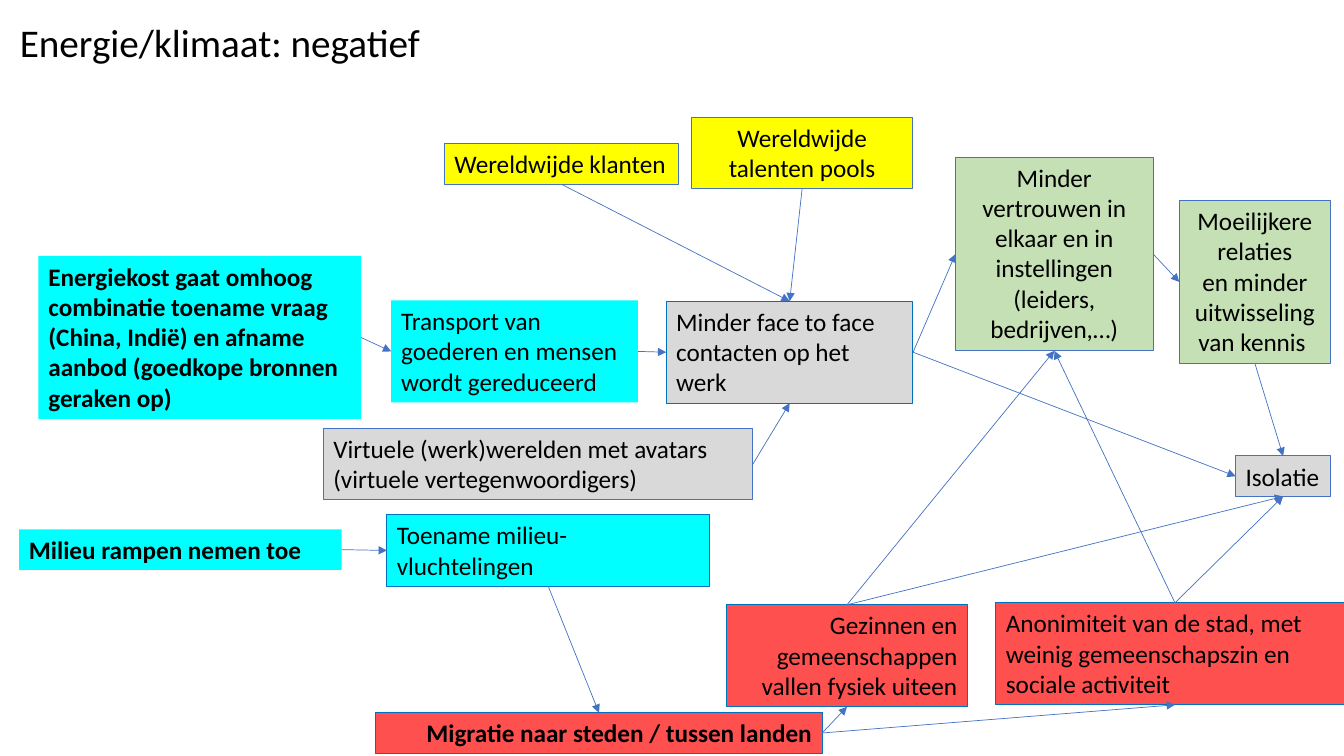
"""Build the slide with the negative energy and climate effects as a cause map."""
from dataclasses import dataclass
from enum import IntEnum
from typing import Optional

from lxml.etree import SubElement
from pptx import Presentation
from pptx.dml.color import RGBColor
from pptx.enum.shapes import MSO_CONNECTOR, MSO_SHAPE
from pptx.enum.text import MSO_ANCHOR, MSO_AUTO_SIZE, PP_ALIGN
from pptx.oxml.ns import qn
from pptx.util import Cm, Pt

FONT = "Calibri"
COLORS = {
    "black": "000000",
    "cyan": "00FFFF",
    "yellow": "FFFF00",
    "grey": "D9D9D9",
    "green": "C5E0B4",
    "red": "FF5050",
    "blue": "4472C4",
    "deep blue": "0070C0",
}


class Side(IntEnum):
    """Connection sites of a rectangle."""

    TOP = 0
    LEFT = 1
    BOTTOM = 2
    RIGHT = 3


@dataclass(frozen=True)
class Box:
    """A factor on the map, with lengths in centimetres."""

    name: str
    text: str
    left: float
    top: float
    width: float
    height: float
    fill: str
    outline: Optional[str] = None
    align: PP_ALIGN = PP_ALIGN.LEFT
    bold: bool = False
    wrap: bool = True


@dataclass(frozen=True)
class Arrow:
    """An influence of one factor on another."""

    source: str
    source_side: Side
    target: str
    target_side: Side


BOXES = [
    Box("energy", "Energiekost gaat omhoog combinatie toename vraag (China, Indië) en afname "
        "aanbod (goedkope bronnen geraken op)", 0.97, 6.45, 8.13, 4.11, "cyan", bold=True),
    Box("talent", "Wereldwijde talenten pools", 17.42, 2.95, 5.59, 1.8,
        "yellow", "blue", PP_ALIGN.CENTER),
    Box("customers", "Wereldwijde klanten", 11.2, 3.62, 5.89, 1.02,
        "yellow", "blue", wrap=False),
    Box("disasters", "Milieu rampen nemen toe", 0.48, 13.34, 8.13, 1.02, "cyan", bold=True),
    Box("virtual", "Virtuele (werk)werelden met avatars (virtuele vertegenwoordigers)",
        8.15, 10.8, 10.82, 1.8, "grey", "blue"),
    Box("transport", "Transport van goederen en mensen wordt gereduceerd",
        9.86, 7.57, 6.22, 2.57, "cyan"),
    Box("contacts", "Minder face to face contacten op het werk",
        16.79, 7.59, 6.22, 2.57, "grey", "deep blue"),
    Box("isolation", "Isolatie", 31.14, 11.49, 2.39, 1.02, "grey", "blue", wrap=False),
    Box("trust", "Minder vertrouwen in elkaar en in instellingen (leiders, bedrijven,…)",
        24.08, 3.96, 4.98, 4.88, "green", "blue", PP_ALIGN.CENTER),
    Box("relations", "Moeilijkere relaties\nen minder uitwisseling van kennis ",
        29.72, 5.05, 3.81, 4.11, "green", "blue", PP_ALIGN.CENTER),
    Box("refugees", "Toename milieu-vluchtelingen", 9.75, 12.97, 8.13, 1.8,
        "cyan", "deep blue"),
    Box("families", "Gezinnen en gemeenschappen vallen fysiek uiteen",
        18.31, 15.24, 6.07, 2.57, "red", "deep blue", PP_ALIGN.RIGHT),
    Box("anonymity", "Anonimiteit van de stad, met weinig gemeenschapszin en sociale activiteit",
        25.1, 15.19, 9.02, 2.57, "red", "deep blue"),
    Box("migration", "Migratie naar steden / tussen landen", 9.47, 17.96, 11.25, 1.02,
        "red", "deep blue", PP_ALIGN.RIGHT, bold=True),
]

ARROWS = [
    Arrow("customers", Side.BOTTOM, "contacts", Side.TOP),
    Arrow("talent", Side.BOTTOM, "contacts", Side.TOP),
    Arrow("virtual", Side.RIGHT, "contacts", Side.BOTTOM),
    Arrow("energy", Side.RIGHT, "transport", Side.LEFT),
    Arrow("transport", Side.RIGHT, "contacts", Side.LEFT),
    Arrow("contacts", Side.RIGHT, "isolation", Side.LEFT),
    Arrow("trust", Side.RIGHT, "relations", Side.LEFT),
    Arrow("relations", Side.BOTTOM, "isolation", Side.TOP),
    Arrow("contacts", Side.RIGHT, "trust", Side.LEFT),
    Arrow("families", Side.TOP, "trust", Side.BOTTOM),
    Arrow("anonymity", Side.TOP, "trust", Side.BOTTOM),
    Arrow("disasters", Side.RIGHT, "refugees", Side.LEFT),
    Arrow("families", Side.TOP, "isolation", Side.BOTTOM),
    Arrow("anonymity", Side.TOP, "isolation", Side.BOTTOM),
    Arrow("migration", Side.RIGHT, "anonymity", Side.BOTTOM),
    Arrow("migration", Side.RIGHT, "families", Side.BOTTOM),
    Arrow("refugees", Side.BOTTOM, "migration", Side.TOP),
]


def color(name: str) -> RGBColor:
    """Look up a named colour."""
    return RGBColor.from_string(COLORS[name])


def format_text(text_frame, size: float, align: PP_ALIGN, bold: bool = False) -> None:
    """Give all runs the slide's font and all paragraphs one alignment."""
    for paragraph in text_frame.paragraphs:
        paragraph.alignment = align
        for run in paragraph.runs:
            run.font.name = FONT
            run.font.size = Pt(size)
            run.font.bold = bold
            run.font.color.rgb = color("black")


def add_title(slide, text: str) -> None:
    """Add the slide's heading."""
    shape = slide.shapes.add_textbox(Cm(0.25), Cm(-0.71), Cm(29.21), Cm(3.68))
    text_frame = shape.text_frame
    text_frame.word_wrap = True
    text_frame.vertical_anchor = MSO_ANCHOR.MIDDLE
    text_frame.text = text
    text_frame.paragraphs[0].line_spacing = 0.9
    format_text(text_frame, 28, PP_ALIGN.LEFT)


def add_box(slide, box: Box):
    """Draw one factor and return its shape."""
    shape = slide.shapes.add_shape(
        MSO_SHAPE.RECTANGLE, Cm(box.left), Cm(box.top), Cm(box.width), Cm(box.height))
    shape.shadow.inherit = False
    shape.fill.solid()
    shape.fill.fore_color.rgb = color(box.fill)
    if box.outline:
        shape.line.color.rgb = color(box.outline)
        shape.line.width = Pt(0.75)
    else:
        shape.line.fill.background()
    text_frame = shape.text_frame
    text_frame.word_wrap = box.wrap
    text_frame.auto_size = MSO_AUTO_SIZE.SHAPE_TO_FIT_TEXT
    text_frame.vertical_anchor = MSO_ANCHOR.TOP
    text_frame.text = box.text
    format_text(text_frame, 18, box.align, box.bold)
    return shape


def add_arrow(slide, arrow: Arrow, shapes: dict) -> None:
    """Join two factors with an arrow."""
    connector = slide.shapes.add_connector(MSO_CONNECTOR.STRAIGHT, 0, 0, 0, 0)
    connector.begin_connect(shapes[arrow.source], int(arrow.source_side))
    connector.end_connect(shapes[arrow.target], int(arrow.target_side))
    connector.line.color.rgb = color("blue")
    connector.line.width = Pt(0.5)
    SubElement(connector.line._get_or_add_ln(), qn("a:tailEnd"), type="triangle")
    SubElement(connector._element.spPr, qn("a:effectLst"))


def main() -> None:
    """Build and save the presentation."""
    presentation = Presentation()
    presentation.slide_width = Cm(33.87)
    presentation.slide_height = Cm(19.05)
    slide = presentation.slides.add_slide(presentation.slide_layouts[6])
    add_title(slide, "Energie/klimaat: negatief")
    shapes = {box.name: add_box(slide, box) for box in BOXES}
    for arrow in ARROWS:
        add_arrow(slide, arrow, shapes)
    presentation.save("out.pptx")


if __name__ == "__main__":
    main()
